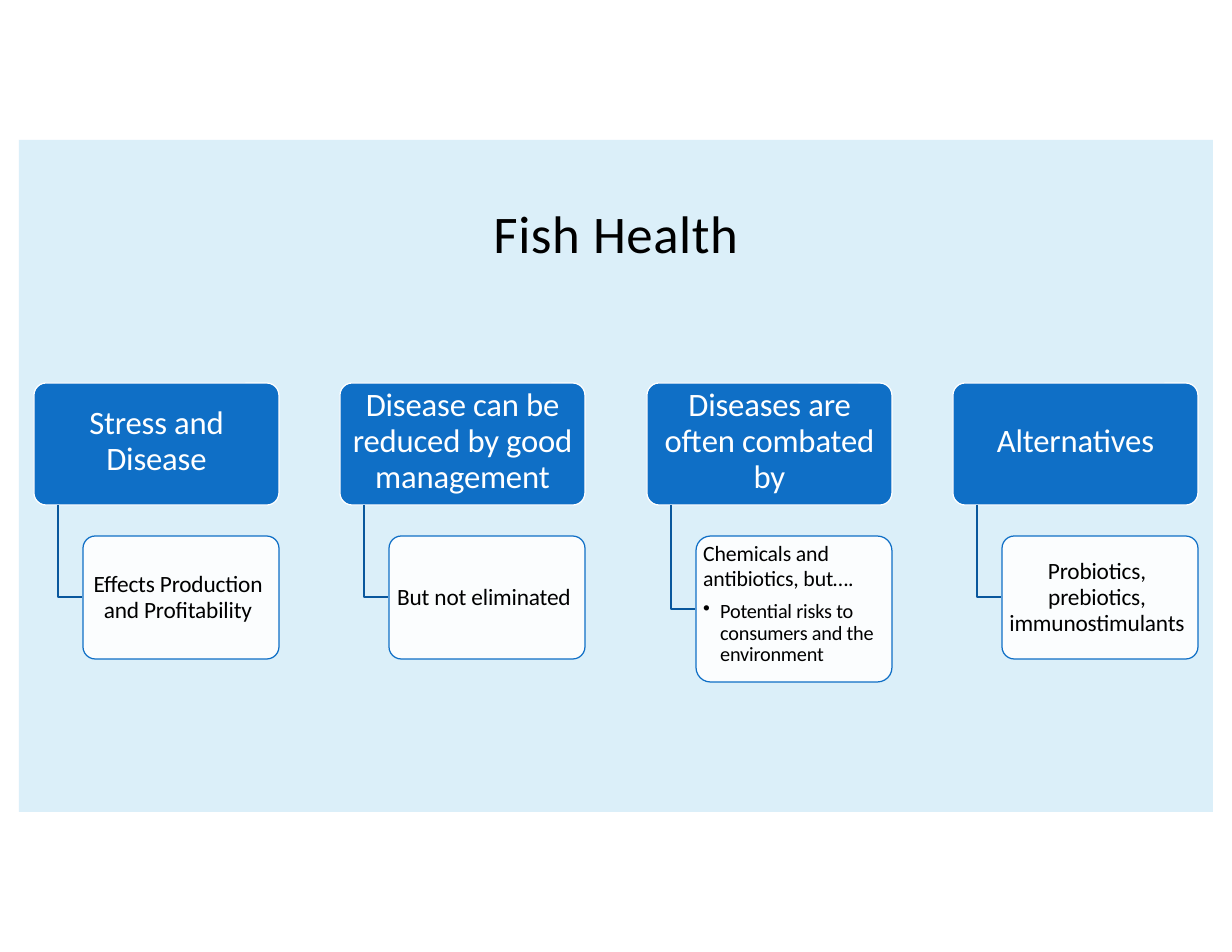
from dataclasses import dataclass

import pptx
import pptx.dml.color
import pptx.enum.shapes
import pptx.enum.text
import pptx.oxml.ns
import pptx.shapes.autoshape
import pptx.slide
import pptx.text.text
import pptx.util
from lxml import etree

EMU_PER_PX = 914400 / 112
FONT = "Calibri"
BLACK = pptx.dml.color.RGBColor(0x00, 0x00, 0x00)
WHITE = pptx.dml.color.RGBColor(0xFF, 0xFF, 0xFF)
PALE_BLUE = pptx.dml.color.RGBColor(0xDB, 0xEF, 0xF9)
BLUE = pptx.dml.color.RGBColor(0x0F, 0x6F, 0xC6)
DARK_BLUE = pptx.dml.color.RGBColor(0x09, 0x57, 0x9D)

FIRST_LEFT, LAST_LEFT = 34, 953
HEADER_TOP, HEADER_WIDTH, HEADER_HEIGHT = 383, 245, 122
DETAIL_TOP, DETAIL_WIDTH = 536, 196
ELBOW_INDENT = 24


@dataclass(frozen=True)
class Topic:
    header: str
    detail: str
    bullet: str = ""
    detail_height: int = 123


@dataclass(frozen=True)
class TextStyle:
    size: int
    color: pptx.dml.color.RGBColor
    line_spacing: float
    centered: bool = True


HEADER_STYLE = TextStyle(21, WHITE, 23)
DETAIL_STYLE = TextStyle(15, BLACK, 16.5)
LEAD_STYLE = TextStyle(14, BLACK, 15.8, centered=False)
BULLET_STYLE = TextStyle(13, BLACK, 13.9, centered=False)

TOPICS = [
    Topic("Stress and Disease", "Effects Production and Profitability"),
    Topic("Disease can be reduced by good management", "But not eliminated"),
    Topic("Diseases are often combated by", "Chemicals and antibiotics, but….",
          "Potential risks to consumers and the environment", 146),
    Topic("Alternatives", "Probiotics, prebiotics, immunostimulants"),
]


def px(length: float) -> pptx.util.Emu:
    return pptx.util.Emu(round(length * EMU_PER_PX))


def set_margins(frame: pptx.text.text.TextFrame, left: int, top: int, right: int, bottom: int) -> None:
    frame.margin_left, frame.margin_top = px(left), px(top)
    frame.margin_right, frame.margin_bottom = px(right), px(bottom)


def format_paragraph(paragraph: pptx.text.text._Paragraph, style: TextStyle) -> None:
    alignment = pptx.enum.text.PP_ALIGN
    paragraph.alignment = alignment.CENTER if style.centered else alignment.LEFT
    paragraph.line_spacing = pptx.util.Pt(style.line_spacing)
    for run in paragraph.runs:
        run.font.name = FONT
        run.font.size = pptx.util.Pt(style.size)
        run.font.color.rgb = style.color
        run.font._element.set("spc", "-10")


def add_bullet(paragraph: pptx.text.text._Paragraph) -> None:
    properties = paragraph._p.get_or_add_pPr()
    properties.set("marL", str(px(17)))
    properties.set("indent", str(-px(17)))
    etree.SubElement(properties, pptx.oxml.ns.qn("a:buChar")).set("char", "•")


def add_rounded_box(slide: pptx.slide.Slide, left: int, top: int, width: int, height: int,
                    fill: pptx.dml.color.RGBColor,
                    line: pptx.dml.color.RGBColor) -> pptx.shapes.autoshape.Shape:
    shape = slide.shapes.add_shape(pptx.enum.shapes.MSO_SHAPE.ROUNDED_RECTANGLE,
                                   px(left), px(top), px(width), px(height))
    shape.adjustments[0] = 0.1
    shape.shadow.inherit = False
    shape.fill.solid()
    shape.fill.fore_color.rgb = fill
    shape.line.color.rgb = line
    shape.line.width = pptx.util.Pt(0.8)
    shape.text_frame.word_wrap = True
    shape.text_frame.vertical_anchor = pptx.enum.text.MSO_ANCHOR.MIDDLE
    return shape


def add_elbow(slide: pptx.slide.Slide, left: int, end_y: int) -> None:
    """Draw the line from a header down and right to its detail box."""
    top = HEADER_TOP + HEADER_HEIGHT
    builder = slide.shapes.build_freeform(left, top, scale=EMU_PER_PX)
    builder.add_line_segments([(left, end_y), (left + ELBOW_INDENT, end_y)], close=False)
    elbow = builder.convert_to_shape()
    elbow.shadow.inherit = False
    elbow.fill.background()
    elbow.line.color.rgb = DARK_BLUE
    elbow.line.width = pptx.util.Pt(0.8)


def add_topic(slide: pptx.slide.Slide, topic: Topic, left: int) -> None:
    header = add_rounded_box(slide, left, HEADER_TOP, HEADER_WIDTH, HEADER_HEIGHT, BLUE, WHITE)
    set_margins(header.text_frame, 5, 0, 5, 6)
    header.text_frame.text = topic.header
    format_paragraph(header.text_frame.paragraphs[0], HEADER_STYLE)

    add_elbow(slide, left + ELBOW_INDENT, DETAIL_TOP + topic.detail_height // 2)
    detail_left = left + HEADER_WIDTH - DETAIL_WIDTH
    detail = add_rounded_box(slide, detail_left, DETAIL_TOP, DETAIL_WIDTH,
                             topic.detail_height, WHITE, BLUE)
    color = detail.fill._xPr.find(".//" + pptx.oxml.ns.qn("a:srgbClr"))
    etree.SubElement(color, pptx.oxml.ns.qn("a:alpha")).set("val", "90000")
    frame = detail.text_frame
    frame.text = topic.detail
    if not topic.bullet:
        set_margins(frame, 0, 0, 6, 0)
        format_paragraph(frame.paragraphs[0], DETAIL_STYLE)
        return
    set_margins(frame, 3, 1, 7, 0)
    frame.vertical_anchor = pptx.enum.text.MSO_ANCHOR.TOP
    format_paragraph(frame.paragraphs[0], LEAD_STYLE)
    paragraph = frame.add_paragraph()
    paragraph.text = topic.bullet
    add_bullet(paragraph)
    format_paragraph(paragraph, BULLET_STYLE)
    paragraph.space_before = pptx.util.Pt(6.8)


def add_title(slide: pptx.slide.Slide, text: str) -> None:
    title = slide.shapes.title
    title.left, title.top, title.width, title.height = px(108), px(198), px(1016), px(68)
    frame = title.text_frame
    frame.text = text
    frame.auto_size = pptx.enum.text.MSO_AUTO_SIZE.NONE
    frame.vertical_anchor = pptx.enum.text.MSO_ANCHOR.TOP
    set_margins(frame, 0, 3, 0, 0)
    frame.paragraphs[0].alignment = pptx.enum.text.PP_ALIGN.CENTER
    font = frame.paragraphs[0].runs[0].font
    font.name = FONT
    font.size = pptx.util.Pt(34)
    font.color.rgb = BLACK
    font._element.set("spc", "40")


def add_panel(slide: pptx.slide.Slide) -> None:
    """Place the pale panel behind the title."""
    panel = slide.shapes.add_shape(pptx.enum.shapes.MSO_SHAPE.RECTANGLE,
                                   px(19), px(140), px(1194), px(672))
    panel.shadow.inherit = False
    panel.fill.solid()
    panel.fill.fore_color.rgb = PALE_BLUE
    panel.line.fill.background()
    slide.shapes.title.element.addprevious(panel.element)


def main() -> None:
    presentation = pptx.Presentation()
    presentation.slide_width, presentation.slide_height = px(1232), px(952)
    slide = presentation.slides.add_slide(presentation.slide_layouts[5])
    add_panel(slide)
    add_title(slide, "Fish Health")
    column_pitch = (LAST_LEFT - FIRST_LEFT) / (len(TOPICS) - 1)
    for column, topic in enumerate(TOPICS):
        add_topic(slide, topic, round(FIRST_LEFT + column * column_pitch))
    presentation.save("out.pptx")


if __name__ == "__main__":
    main()
